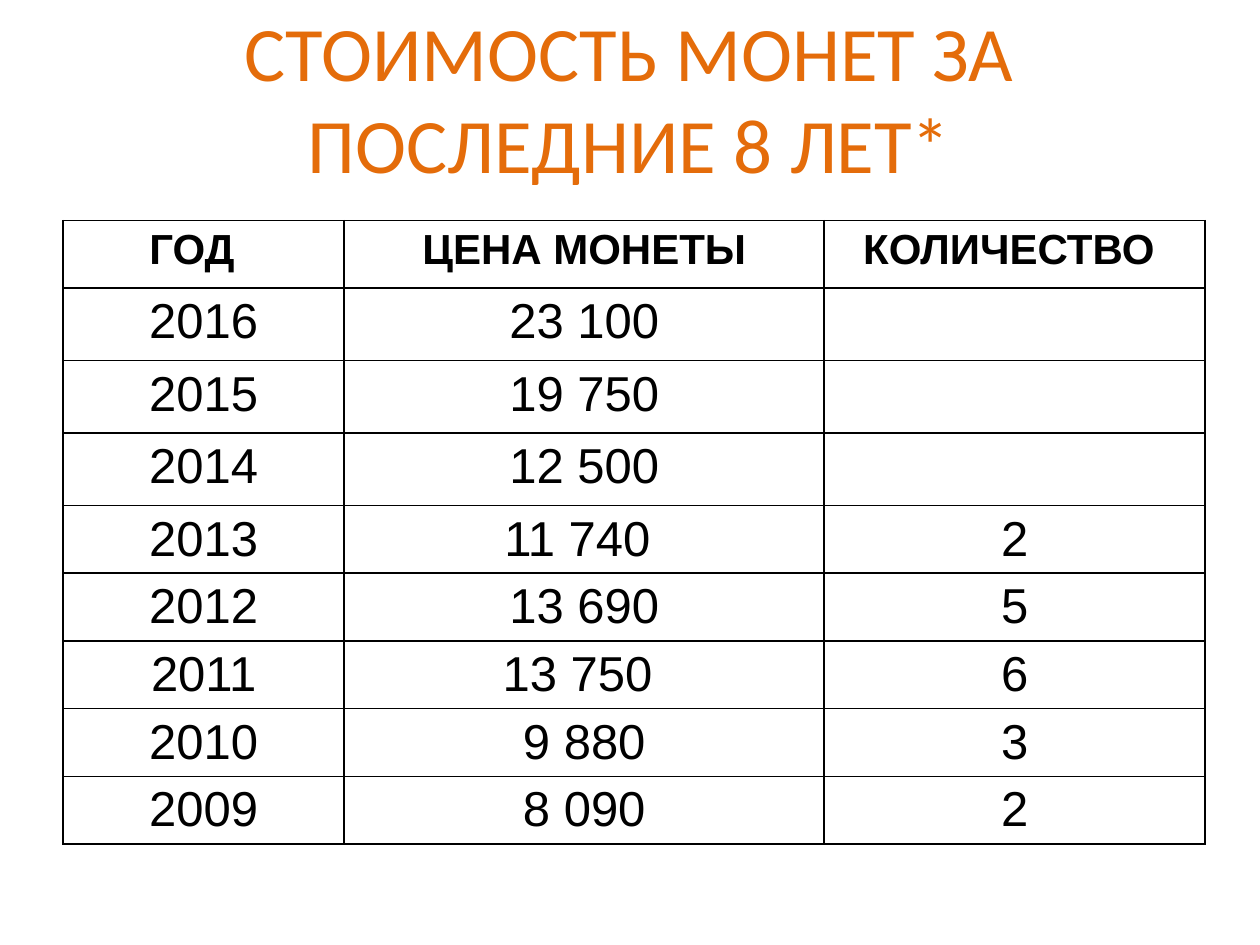
from lxml import etree
from pptx import Presentation
from pptx.dml.color import RGBColor
from pptx.enum.text import MSO_ANCHOR, MSO_AUTO_SIZE, PP_ALIGN
from pptx.oxml.ns import qn
from pptx.util import Pt

CENTER = PP_ALIGN.CENTER
MIDDLE = MSO_ANCHOR.MIDDLE
NO_AUTOFIT = MSO_AUTO_SIZE.NONE
TITLE_ONLY = 5

COLORS = {"title": "E46C0A", "text": "000000", "border": "000000"}
FORMATS = {
    "title": {"name": "Calibri", "size": Pt(44), "bold": False},
    "header": {"name": "Arial", "size": Pt(24), "bold": True},
    "body": {"name": "Arial", "size": Pt(28), "bold": False},
}
CELL_MARGINS = {"margin_left": Pt(7.2), "margin_right": Pt(7.2),
                "margin_top": Pt(3.6), "margin_bottom": Pt(2.5)}

COLUMN_WIDTHS = [160.7, 274.3, 217.7]
ROW_HEIGHT = 38.7
OPEN_ROW_HEIGHT = 41.4  # years without a quantity
YEAR_HEADER_MARGIN = 20.5  # shifts the first heading left of centre

HEADER = ["ГОД", "ЦЕНА МОНЕТЫ", "КОЛИЧЕСТВО "]
PRICES = [
    ["2016", "23 100", ""],
    ["2015", "19 750", ""],
    ["2014", "12 500", ""],
    ["2013", "11 740 ", "2"],
    ["2012", "13 690", "5"],
    ["2011", "13 750 ", "6"],
    ["2010", "9 880", "3"],
    ["2009", "8 090", "2"],
]


def set_attributes(target, values):
    for name, value in values.items():
        setattr(target, name, value)


def write_text(frame, text, style, color):
    para = frame.paragraphs[0]
    para.alignment = CENTER
    if text:
        span = para.add_run()
        span.text = text
        set_attributes(span.font, FORMATS[style])
        span.font.color.rgb = RGBColor.from_string(COLORS[color])


def add_borders(cell):
    properties = cell._tc.get_or_add_tcPr()
    for position, side in enumerate(("lnL", "lnR", "lnT", "lnB")):
        line = etree.Element(qn(f"a:{side}"), w=str(Pt(1)))
        fill = etree.SubElement(line, qn("a:solidFill"))
        etree.SubElement(fill, qn("a:srgbClr"), val=COLORS["border"])
        properties.insert(position, line)


def place_title(page, left, top, width, height):
    title = page.shapes.title
    set_attributes(title, {"left": Pt(left), "top": Pt(top),
                           "width": Pt(width), "height": Pt(height)})
    set_attributes(title.text_frame, {"word_wrap": True, "auto_size": NO_AUTOFIT,
                                      "vertical_anchor": MIDDLE})
    write_text(title.text_frame, "СТОИМОСТЬ МОНЕТ ЗА ПОСЛЕДНИЕ 8 ЛЕТ*", "title", "title")


def place_price_table(page, left, top):
    rows = [HEADER] + PRICES
    heights = [ROW_HEIGHT if row[-1] else OPEN_ROW_HEIGHT for row in rows]
    table = page.shapes.add_table(
        len(rows), len(HEADER), Pt(left), Pt(top),
        Pt(sum(COLUMN_WIDTHS)), Pt(sum(heights))).table
    set_attributes(table, {"first_row": False, "horz_banding": False})
    for column, width in zip(table.columns, COLUMN_WIDTHS):
        column.width = Pt(width)
    for row_index, values in enumerate(rows):
        table.rows[row_index].height = Pt(heights[row_index])
        style = "body" if row_index else "header"
        for column_index, text in enumerate(values):
            cell = table.cell(row_index, column_index)
            set_attributes(cell, CELL_MARGINS)
            cell.fill.background()
            add_borders(cell)
            write_text(cell.text_frame, text, style, "text")
    table.cell(0, 0).margin_right = Pt(YEAR_HEADER_MARGIN)


def main():
    deck = Presentation()
    deck.slide_width, deck.slide_height = Pt(720), Pt(540)
    page = deck.slides.add_slide(deck.slide_layouts[TITLE_ONLY])
    place_title(page, 36, 21.6, 647.3, 67)
    place_price_table(page, 36, 126)
    deck.save("out.pptx")


if __name__ == "__main__":
    main()
